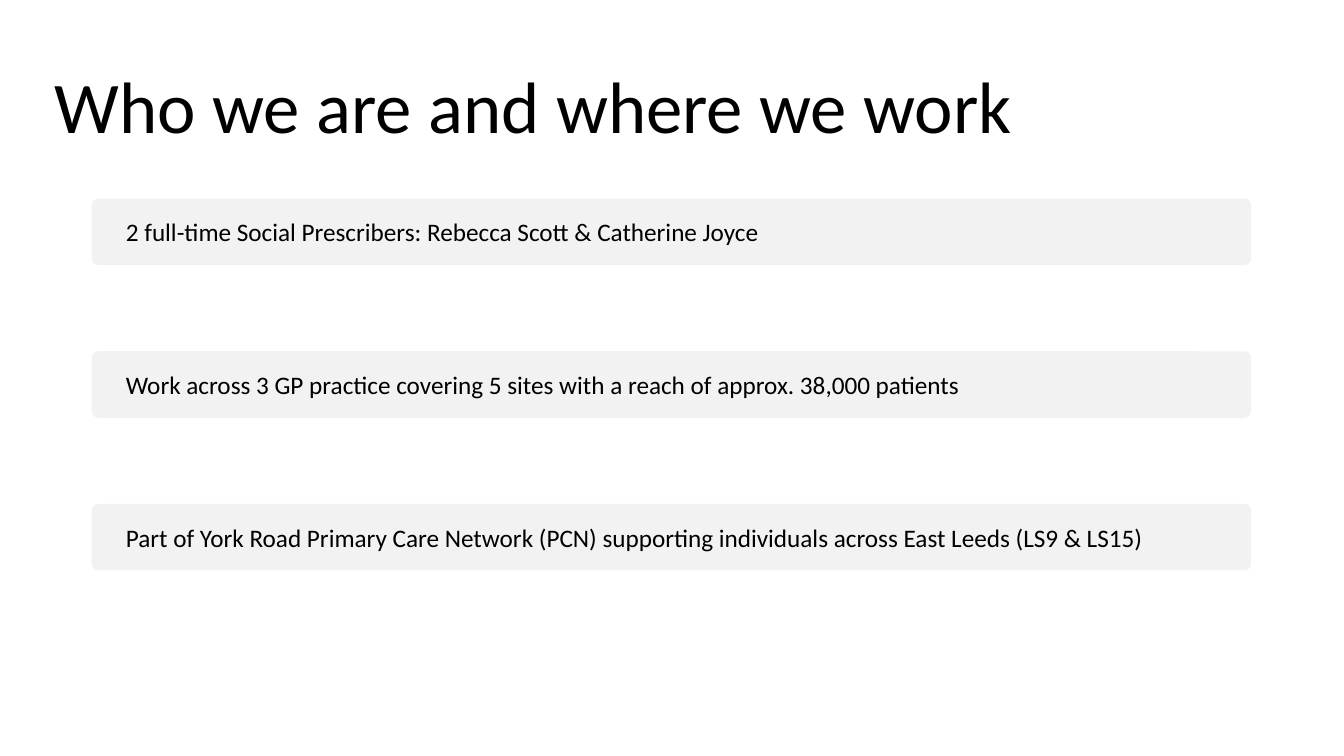
from dataclasses import dataclass

from pptx import Presentation
from pptx.dml.color import RGBColor
from pptx.enum.shapes import MSO_SHAPE
from pptx.enum.text import MSO_ANCHOR, MSO_AUTO_SIZE, PP_ALIGN
from pptx.util import Inches, Pt

ROUNDED = MSO_SHAPE.ROUNDED_RECTANGLE
BOTTOM = MSO_ANCHOR.BOTTOM
CENTER = PP_ALIGN.CENTER
LEFT = PP_ALIGN.LEFT
NO_AUTOFIT = MSO_AUTO_SIZE.NONE
TITLE_ONLY_LAYOUT = 5


@dataclass(frozen=True)
class Theme:
    font: str = "Calibri"
    text: RGBColor = RGBColor(0x00, 0x00, 0x00)
    card: RGBColor = RGBColor(0xF2, 0xF2, 0xF2)
    title_size: int = 52
    body_size: int = 18


THEME = Theme()
TITLE = "Who we are and where we work"
FACTS = [
    "2 full-time Social Prescribers: Rebecca Scott & Catherine Joyce",
    "Work across 3 GP practice covering 5 sites with a reach of approx. 38,000 patients",
    "Part of York Road Primary Care Network (PCN) supporting individuals across East Leeds (LS9 & LS15)",
]


def write_line(text_frame, text, size, alignment):
    paragraph = text_frame.paragraphs[0]
    paragraph.alignment = alignment
    run = paragraph.add_run()
    run.text = text
    run.font.name = THEME.font
    run.font.size = Pt(size)
    run.font.color.rgb = THEME.text
    return paragraph


def place_title(slide, text, left, top, width, height):
    title = slide.shapes.title
    title.left, title.top = Inches(left), Inches(top)
    title.width, title.height = Inches(width), Inches(height)
    text_frame = title.text_frame
    text_frame.word_wrap = True
    text_frame.auto_size = NO_AUTOFIT
    text_frame.vertical_anchor = BOTTOM
    paragraph = write_line(text_frame, text, THEME.title_size, CENTER)
    paragraph.line_spacing = 0.9


def add_fact_card(slide, text, left, top, width, height):
    card = slide.shapes.add_shape(
        ROUNDED, Inches(left), Inches(top), Inches(width), Inches(height)
    )
    card.adjustments[0] = 0.1
    card.shadow.inherit = False
    card.fill.solid()
    card.fill.fore_color.rgb = THEME.card
    card.line.fill.background()

    inset = 0.24
    label_height = 0.4
    label = slide.shapes.add_textbox(
        Inches(left + inset),
        Inches(top + (height - label_height) / 2),
        Inches(width - 2 * inset),
        Inches(label_height),
    )
    label.text_frame.word_wrap = True
    write_line(label.text_frame, text, THEME.body_size, LEFT)


def add_fact_list(slide, facts, left, top, width, height):
    card_height = 0.66
    pitch = (height - card_height) / (len(facts) - 1)
    for index, fact in enumerate(facts):
        add_fact_card(slide, fact, left, top + index * pitch, width, card_height)


def main():
    presentation = Presentation()
    presentation.slide_width = Inches(13.33)
    presentation.slide_height = Inches(7.5)
    layout = presentation.slide_layouts[TITLE_ONLY_LAYOUT]
    slide = presentation.slides.add_slide(layout)
    place_title(slide, TITLE, 0.29, 0.65, 10, 0.88)
    add_fact_list(slide, FACTS, 0.91, 1.97, 11.5, 3.69)
    presentation.save("out.pptx")


if __name__ == "__main__":
    main()
